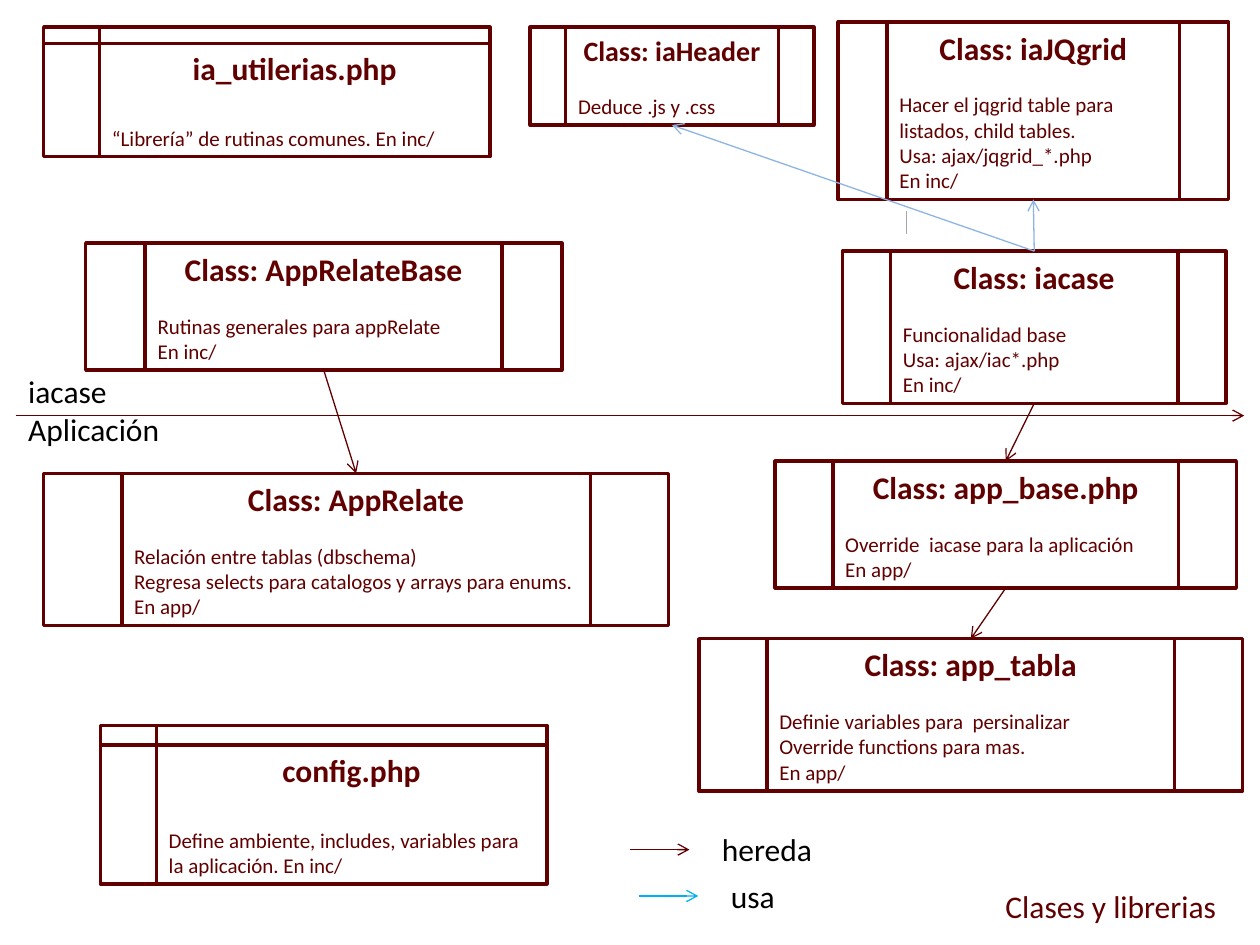
from lxml.etree import SubElement
from pptx import Presentation
from pptx.dml.color import RGBColor
from pptx.enum.shapes import MSO_CONNECTOR, MSO_SHAPE
from pptx.enum.text import MSO_ANCHOR, PP_ALIGN
from pptx.oxml.ns import qn
from pptx.util import Pt

MAROON = RGBColor(0x60, 0x00, 0x00)
LIGHT_BLUE = RGBColor(0x8E, 0xB4, 0xE3)
CYAN = RGBColor(0x00, 0xB0, 0xF0)
BLACK = RGBColor(0x00, 0x00, 0x00)
GRAY = RGBColor(0xA6, 0xA6, 0xA6)

prs = Presentation()
prs.slide_width, prs.slide_height = Pt(720), Pt(540)
s = prs.slides.add_slide(prs.slide_layouts[6])


def write(p, text, color, **fmt):
    r = p.add_run()
    r.text = text
    r.font.color.rgb = color
    for name, value in {"name": "Calibri", **fmt}.items():
        setattr(r.font, name, value)


def connect(points, color, arrow=True):
    c = s.shapes.add_connector(MSO_CONNECTOR.STRAIGHT, *[Pt(v) for v in points])
    c.line.color.rgb = color
    c.line.width = Pt(0.75)
    if arrow:
        SubElement(c.line._get_or_add_ln(), qn("a:tailEnd"), type="arrow")
    SubElement(c._element.spPr, qn("a:effectLst"))
    return c


CLASS = MSO_SHAPE.FLOWCHART_PREDEFINED_PROCESS
FILE = MSO_SHAPE.FLOWCHART_INTERNAL_STORAGE
modules = [
    (CLASS, "Class: iacase", 18, (481.5, 143.5, 219, 87),
     ["Funcionalidad base", "Usa: ajax/iac*.php", "En inc/"]),
    (CLASS, "Class: app_base.php", 18, (443, 263.5, 263.5, 72.5),
     ["Override  iacase para la aplicación", "En app/"]),
    (CLASS, "Class: AppRelateBase", 18, (49, 139, 272, 72.5),
     ["Rutinas generales para appRelate", "En inc/"]),
    (CLASS, "Class: AppRelate", 18, (25, 270.5, 357, 87),
     ["Relación entre tablas (dbschema)",
      "Regresa selects para catalogos y arrays para enums.", "En app/"]),
    (CLASS, "Class: app_tabla", 18, (399.5, 365, 310.5, 87),
     ["Definie variables para  persinalizar",
      "Override functions para mas.", "En app/"]),
    (FILE, "ia_utilerias.php", 18, (25, 15.5, 255, 74),
     ["“Librería” de rutinas comunes. En inc/"]),
    (FILE, "config.php", 18, (57.5, 414.5, 255, 90.5),
     ["Define ambiente, includes, variables para la aplicación. En inc/"]),
    (CLASS, "Class: iaJQgrid", 18, (479, 12.5, 223, 101.5),
     ["Hacer el jqgrid table para listados, child tables.",
      "Usa: ajax/jqgrid_*.php", "En inc/"]),
    (CLASS, "Class: iaHeader", 16, (303, 15.5, 162, 56),
     ["Deduce .js y .css"]),
]

boxes = {}
for kind, title, size, place, lines in modules:
    sp = s.shapes.add_shape(kind, *[Pt(v) for v in place])
    sp.shadow.inherit = False
    sp.fill.background()
    sp.line.color.rgb = MAROON
    sp.line.width = Pt(2)
    tf = sp.text_frame
    tf.word_wrap = True
    tf.vertical_anchor = MSO_ANCHOR.MIDDLE
    p = tf.paragraphs[0]
    p.alignment = PP_ALIGN.CENTER
    p.space_after = Pt(22 if kind == FILE else 14.6)
    write(p, title, MAROON, size=Pt(size), bold=True)
    for line in lines:
        p = tf.add_paragraph()
        p.alignment = PP_ALIGN.LEFT
        write(p, line, MAROON, size=Pt(12), bold=False)
    boxes[title.removeprefix("Class: ")] = sp

TOP, BOTTOM = 0, 2
relations = [
    ("AppRelateBase", BOTTOM, "AppRelate", TOP, MAROON),
    ("iacase", BOTTOM, "app_base.php", TOP, MAROON),
    ("app_base.php", BOTTOM, "app_tabla", TOP, MAROON),
    ("iacase", TOP, "iaJQgrid", BOTTOM, LIGHT_BLUE),
    ("iacase", TOP, "iaHeader", BOTTOM, LIGHT_BLUE),
]
for start, start_site, end, end_site, color in relations:
    c = connect((0, 0, 0, 0), color)
    c.begin_connect(boxes[start], start_site)
    c.end_connect(boxes[end], end_site)

connect((9, 237.5, 711, 237.5), MAROON)
connect((360, 485.5, 394, 485.5), MAROON)
connect((365, 512, 399, 512), CYAN)
connect((518, 120.5, 518, 133.5), GRAY, arrow=False)

labels = [
    ("iacase", 9, 209, 60, BLACK),
    ("Aplicación", 9, 230.5, 90, BLACK),
    ("hereda", 405.5, 471, 67, BLACK),
    ("usa", 410.5, 497.5, 40, BLACK),
    ("Clases y librerias", 567.5, 503.5, 136, MAROON),
]
for text, x, y, w, color in labels:
    tf = s.shapes.add_textbox(Pt(x), Pt(y), Pt(w), Pt(29)).text_frame
    tf.word_wrap = False
    write(tf.paragraphs[0], text, color, size=Pt(18))

prs.save("out.pptx")
